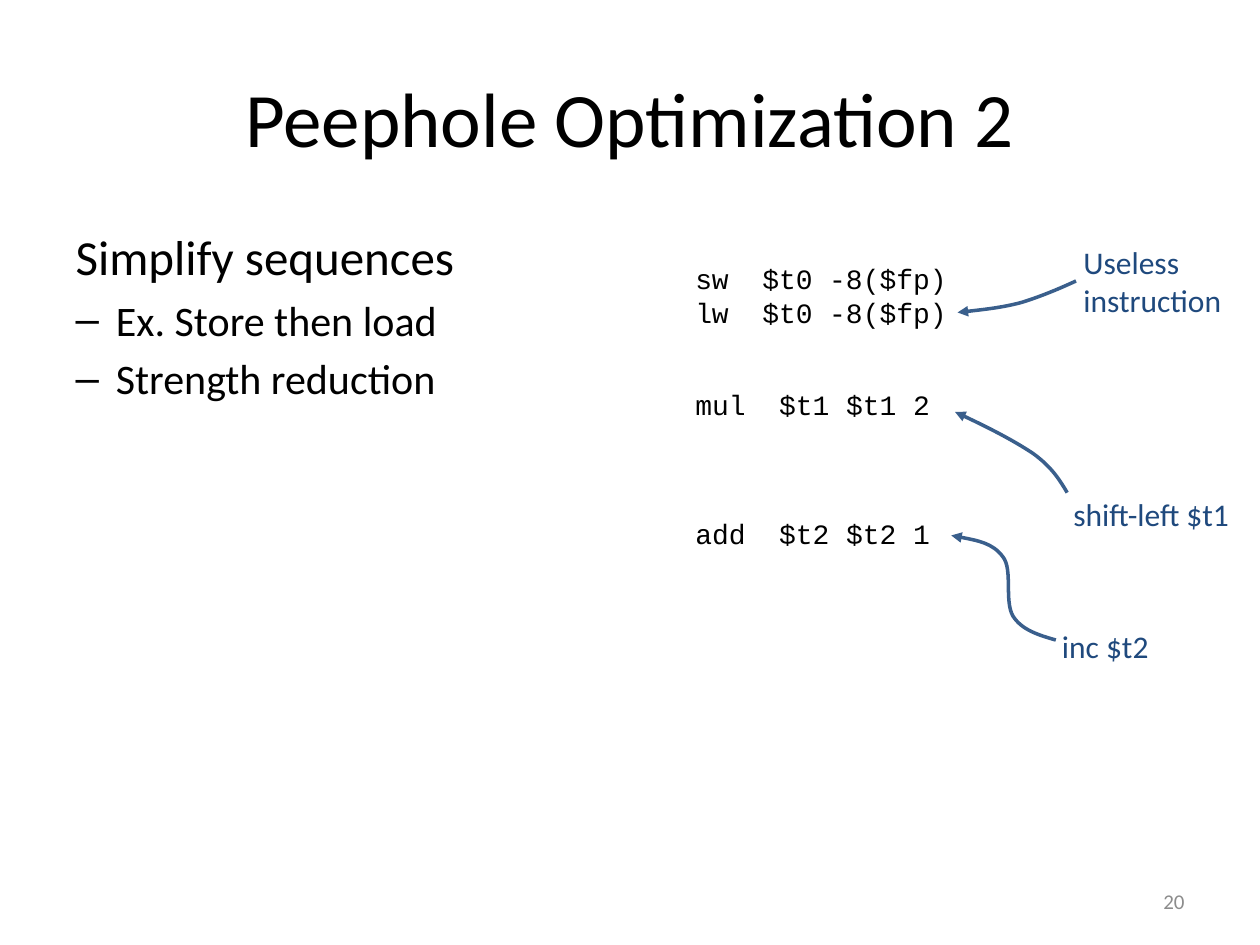
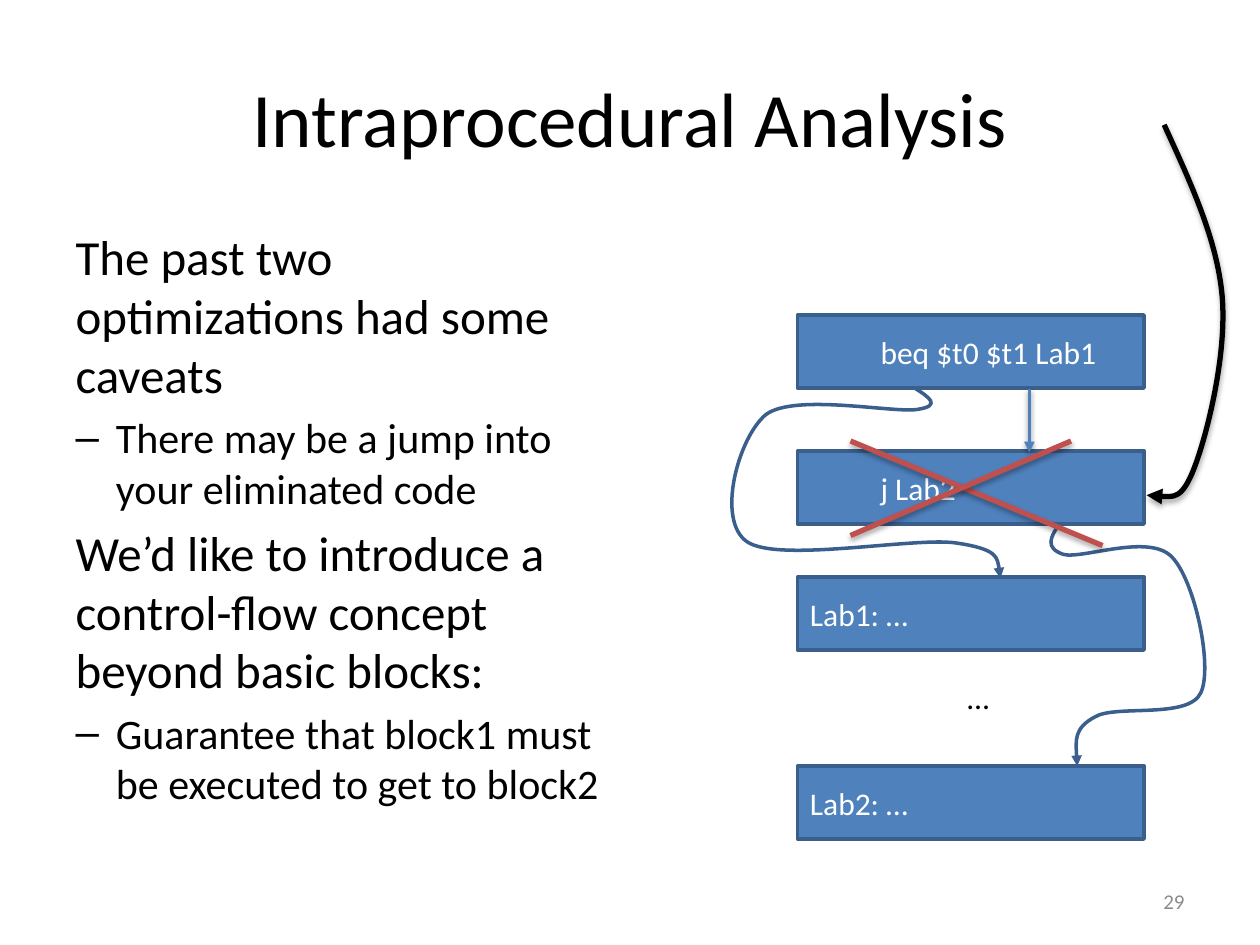
from itertools import chain
from pptx import Presentation
from pptx.dml.color import RGBColor
from pptx.enum.shapes import MSO_CONNECTOR, MSO_SHAPE
from pptx.enum.text import MSO_ANCHOR, MSO_AUTO_SIZE, PP_ALIGN
from pptx.oxml.ns import qn
from pptx.util import Inches, Pt
from lxml.etree import SubElement

BLACK, WHITE, GRAY = "000000", "FFFFFF", "8C8C8C"
BLUE, EDGE, NAVY, RED = "4F81BD", "3A5F8C", "1F497D", "C0504D"
TITLE_BOX = (0.5, 0.3, 9, 1.25)
BODY_BOX = (0.5, 1.75, 4.42, 4.95)
NUMBER_BOX = (7.17, 6.95, 2.33, 0.4)
HANG = 0.32
BODY_SIZES = (28, 24)

TEXT = dict(name="Calibri", size=18, color=BLACK)
NOTE = dict(TEXT, color=NAVY)
CODE = dict(TEXT, name="Courier New", size=16)
LABEL = dict(TEXT, color=WHITE)
FOOT = dict(TEXT, size=12, color=GRAY)

# Each body line is (level, text).
PEEPHOLE = dict(
    title="Peephole Optimization 2", number=20,
    body=[(0, "Simplify sequences"),
          (1, "Ex. Store then load"),
          (1, "Strength reduction")])
ANALYSIS = dict(
    title="Intraprocedural Analysis", number=29,
    body=[(0, "The past two optimizations had some caveats"),
          (1, "There may be a jump into your eliminated code"),
          (0, "We’d like to introduce a control-flow concept beyond basic blocks:"),
          (1, "Guarantee that block1 must be executed to get to block2")])

SNIPPETS = [
    ("sw  $t0 -8($fp)\nlw  $t0 -8($fp)", (5.42, 2.03, 2.23, 0.64), CODE),
    ("mul  $t1 $t1 2", (5.42, 3.03, 2.09, 0.37), CODE),
    ("add  $t2 $t2 1", (5.42, 4.05, 2.09, 0.37), CODE),
    ("Useless\ninstruction", (8.5, 1.88, 1.31, 0.71), NOTE),
    ("shift-left $t1", (8.42, 3.88, 1.47, 0.4), NOTE),
    ("inc $t2", (8.33, 4.93, 0.9, 0.4), NOTE)]

# A curve is its start, then two handles and an end for every segment.
POINTERS = [
    [(8.54, 2.23), (8.41, 2.29), (8.27, 2.35), (8.11, 2.4),
     (7.96, 2.44), (7.78, 2.46), (7.6, 2.48)],
    [(8.47, 3.91), (8.41, 3.81), (8.35, 3.71), (8.2, 3.6),
     (8.05, 3.5), (7.82, 3.38), (7.58, 3.27)],
    [(8.38, 5.08), (8.24, 5.04), (8.11, 5), (8.04, 4.89),
     (7.97, 4.77), (8.04, 4.52), (7.96, 4.42),
     (7.88, 4.31), (7.71, 4.28), (7.55, 4.25)]]
JUMPS = [
    [(7.26, 3.08), (7.37, 3.15), (7.48, 3.22), (7.28, 3.25),
     (7.09, 3.28), (6.31, 3.12), (6.08, 3.29),
     (5.86, 3.47), (5.68, 4.13), (5.93, 4.3),
     (6.18, 4.47), (7.26, 4.26), (7.59, 4.31),
     (7.93, 4.36), (7.93, 4.48), (7.94, 4.59)],
    [(8.4, 4.17), (8.34, 4.26), (8.29, 4.35), (8.44, 4.4),
     (8.59, 4.44), (9.12, 4.23), (9.3, 4.42),
     (9.48, 4.6), (9.63, 5.29), (9.53, 5.5),
     (9.43, 5.71), (8.85, 5.59), (8.69, 5.69),
     (8.52, 5.78), (8.54, 5.93), (8.55, 6.08)]]
ENTRY = [(9.24, 0.99), (9.45, 1.45), (9.66, 1.9), (9.7, 2.35),
         (9.74, 2.81), (9.58, 3.45), (9.48, 3.71),
         (9.38, 3.97), (9.24, 3.95), (9.1, 3.93)]

# Each block is (top, text, indent).
BLOCKS = [(2.5, "beq $t0 $t1 Lab1", 0.56), (3.58, "j Lab2", 0.56),
          (4.58, "Lab1: …", 0), (6.08, "Lab2: …", 0)]
BLOCK_X, BLOCK_W, BLOCK_H = 6.33, 2.75, 0.58
CROSS = [((6.75, 3.5), (8.75, 4.33)), ((8.5, 3.5), (6.75, 4.25))]
DROP_SHADE, SHADE = (38, 1.6), (35, 1.8)


def inch(values):
    return [Inches(v) for v in values]


def paint(color, code):
    color.rgb = RGBColor.from_string(code)


def style(para, form):
    for key, value in form.items():
        if key == "color":
            paint(para.font.color, value)
        else:
            setattr(para.font, key, Pt(value) if key == "size" else value)


def indent(para, left, hang=0):
    props = para._p.get_or_add_pPr()
    props.set("marL", str(Inches(left)))
    props.set("indent", str(Inches(hang)))
    return props


def place(shape, box):
    for key, value in zip(("left", "top", "width", "height"), inch(box)):
        setattr(shape, key, value)


def write(shapes, text, box, form, align=PP_ALIGN.LEFT, anchor=MSO_ANCHOR.TOP, wrap=False):
    frame = shapes.add_textbox(*inch(box)).text_frame
    frame.text = text
    frame.word_wrap, frame.vertical_anchor = wrap, anchor
    for para in frame.paragraphs:
        para.alignment = align
        style(para, form)


def stroke(shape, color, width, shade=None, arrow=True):
    """Set the outline; shade is (opacity in percent, distance in points)."""
    paint(shape.line.color, color)
    shape.line.width = Pt(width)
    if arrow:
        SubElement(shape.line._get_or_add_ln(), qn("a:tailEnd"), type="triangle")
    props = shape._element.spPr
    for old in props.findall(qn("a:effectLst")):
        props.remove(old)
    effects = SubElement(props, qn("a:effectLst"))
    if shade:
        alpha, dist = shade
        outer = SubElement(effects, qn("a:outerShdw"), blurRad=str(Pt(3.1)),
                           dist=str(Pt(dist)), dir="5400000", rotWithShape="0")
        tint = SubElement(outer, qn("a:srgbClr"), val=BLACK)
        SubElement(tint, qn("a:alpha"), val=str(alpha * 1000))


def curve(shapes, points, color=EDGE, width=2, shade=None):
    start, *rest = points
    pen = shapes.build_freeform(*inch(start), scale=1.0)
    pen.add_line_segments([inch(p) for p in rest], close=False)
    shape = pen.convert_to_shape()
    shape.fill.background()
    # Turn every three straight steps into one Bézier segment.
    steps = list(shape._element.iter(qn("a:lnTo")))
    for i in range(0, len(steps), 3):
        trio = steps[i:i + 3]
        bend = SubElement(trio[0].getparent(), qn("a:cubicBezTo"))
        for point in chain.from_iterable(trio):
            bend.append(point)
        for step in trio:
            step.getparent().remove(step)
    stroke(shape, color, width, shade)


def line(shapes, start, end, color, width, shade, arrow):
    link = shapes.add_connector(MSO_CONNECTOR.STRAIGHT, *inch(start + end))
    stroke(link, color, width, shade, arrow)


def block(shapes, top, text, left):
    shape = shapes.add_shape(MSO_SHAPE.RECTANGLE, *inch((BLOCK_X, top, BLOCK_W, BLOCK_H)))
    shape.shadow.inherit = False
    shape.fill.solid()
    paint(shape.fill.fore_color, BLUE)
    stroke(shape, EDGE, 2, arrow=False)
    frame = shape.text_frame
    frame.text, frame.vertical_anchor = text, MSO_ANCHOR.MIDDLE
    para = frame.paragraphs[0]
    para.alignment = PP_ALIGN.LEFT
    indent(para, left)
    style(para, LABEL)


def fill_body(frame, lines):
    frame.text = "\n".join(text for level, text in lines)
    frame.auto_size = MSO_AUTO_SIZE.NONE
    for para, (level, text) in zip(frame.paragraphs, lines):
        para.level = level
        props = indent(para, HANG * level, -HANG * level)
        if level:
            SubElement(props, qn("a:buChar"), char="–")
        else:
            SubElement(props, qn("a:buNone"))
        style(para, dict(TEXT, size=BODY_SIZES[level]))


def add_page(deck, title, number, body):
    page = deck.slides.add_slide(deck.slide_layouts[3])
    head, text, spare = page.placeholders
    spare._element.getparent().remove(spare._element)
    place(head, TITLE_BOX)
    place(text, BODY_BOX)
    head.text_frame.text = title
    head.text_frame.vertical_anchor = MSO_ANCHOR.MIDDLE
    para = head.text_frame.paragraphs[0]
    para.alignment = PP_ALIGN.CENTER
    style(para, dict(TEXT, size=44))
    fill_body(text.text_frame, body)
    write(page.shapes, str(number), NUMBER_BOX, FOOT, PP_ALIGN.RIGHT, MSO_ANCHOR.MIDDLE, True)
    return page.shapes


def draw_code(shapes):
    for text, box, form in SNIPPETS:
        write(shapes, text, box, form)
    for points in POINTERS:
        curve(shapes, points)


def draw_flow(shapes):
    flow = shapes.add_group_shape().shapes
    for item in BLOCKS:
        block(flow, *item)
    line(flow, (8.17, 3.09), (8.17, 3.59), BLUE, 2, DROP_SHADE, True)
    write(flow, "…", (7.58, 5.33, 0.38, 0.4), TEXT)
    for points in JUMPS:
        curve(flow, points)
    curve(shapes, ENTRY, BLACK, 3, SHADE)
    for start, end in CROSS:
        line(shapes, start, end, RED, 3, SHADE, False)


def main():
    deck = Presentation()
    deck.slide_width, deck.slide_height = inch((10, 7.5))
    draw_code(add_page(deck, **PEEPHOLE))
    draw_flow(add_page(deck, **ANALYSIS))
    deck.save("out.pptx")


if __name__ == "__main__":
    main()
